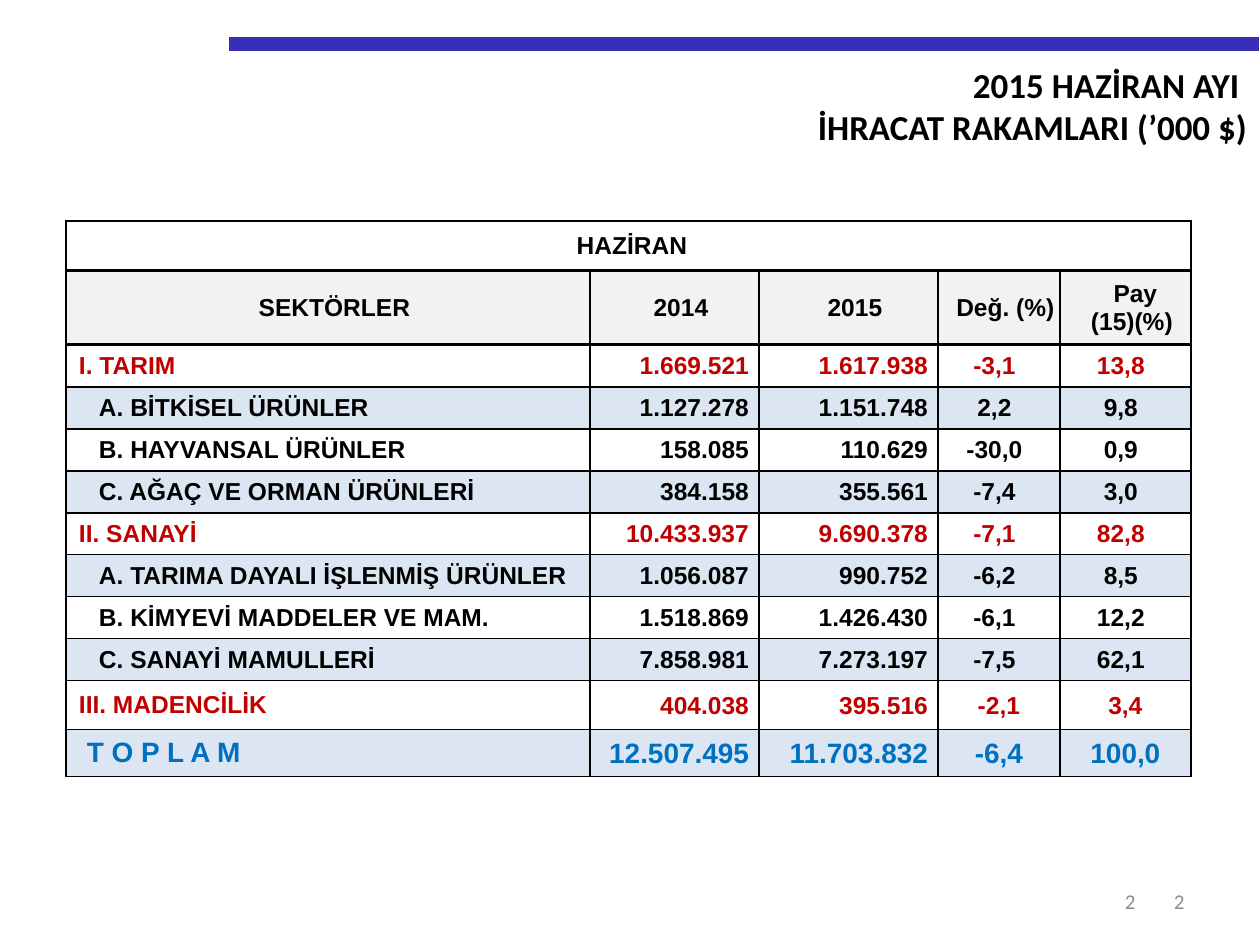
from dataclasses import dataclass

from lxml import etree
from pptx import Presentation
from pptx.dml.color import RGBColor
from pptx.enum import shapes, text
from pptx.oxml import ns
from pptx import util as u


@dataclass(frozen=True)
class Theme:
    heading_font: str = "Calibri"
    table_font: str = "Arial"
    black: str = "000000"
    red: str = "C00000"
    blue: str = "0070C0"
    grey: str = "8C8C8C"
    rule: str = "382EB8"
    header_fill: str = "F2F2F2"
    band_fill: str = "DCE6F2"
    title_size: int = 20
    table_size: int = 14
    total_size: int = 16
    number_size: int = 12


THEME = Theme()
LEFT, CENTER, RIGHT = (text.PP_ALIGN.LEFT, text.PP_ALIGN.CENTER, text.PP_ALIGN.RIGHT)
LABEL_INSETS = (13, 6, 0, 6)
FIGURE_INSETS = (1, 1, 10, 0)
TIGHT_INSETS = (1, 1, 1, 0)

TITLE = ["2015 HAZİRAN AYI ", "İHRACAT RAKAMLARI (’000 $)"]
HEADERS = ["SEKTÖRLER", "2014", "2015", "Değ. (%)", "Pay\n(15)(%)"]
SECTORS = [
    ("I. TARIM", "1.669.521", "1.617.938", "-3,1", "13,8"),
    ("A. BİTKİSEL ÜRÜNLER", "1.127.278", "1.151.748", "2,2", "9,8"),
    ("B. HAYVANSAL ÜRÜNLER", "158.085", "110.629", "-30,0", "0,9"),
    ("C. AĞAÇ VE ORMAN ÜRÜNLERİ", "384.158", "355.561", "-7,4", "3,0"),
    ("II. SANAYİ", "10.433.937", "9.690.378", "-7,1", "82,8"),
    ("A. TARIMA DAYALI İŞLENMİŞ ÜRÜNLER", "1.056.087", "990.752", "-6,2", "8,5"),
    ("B. KİMYEVİ MADDELER VE MAM.", "1.518.869", "1.426.430", "-6,1", "12,2"),
    ("C. SANAYİ MAMULLERİ", "7.858.981", "7.273.197", "-7,5", "62,1"),
    ("III. MADENCİLİK", "404.038", "395.516", "-2,1", "3,4"),
    ("T O P L A M", "12.507.495", "11.703.832", "-6,4", "100,0"),
]
COLUMN_WIDTHS = [524, 169, 179, 122, 131]
ROW_HEIGHTS = [50, 74] + [42] * 8 + [49, 47]


def px(length):
    """Turn pixels, 126 to the inch, into EMU."""
    return u.Emu(round(length * 914400 / 126))


def style_font(font, name, size, color, bold=False):
    font.name = name
    font.size = u.Pt(size)
    font.bold = bold
    font.color.rgb = RGBColor.from_string(color)


def indent(para, length):
    para._p.get_or_add_pPr().set("marL", str(px(length)))


def add_title(page):
    title = page.shapes.title
    title.left, title.top, title.width, title.height = map(px, (134, 57, 1126, 97))
    frame = title.text_frame
    frame.text = "\n".join(TITLE)
    frame.word_wrap = True
    frame.auto_size = text.MSO_AUTO_SIZE.SHAPE_TO_FIT_TEXT
    frame.vertical_anchor = text.MSO_ANCHOR.TOP
    for para in frame.paragraphs:
        para.alignment = RIGHT
        style_font(para.font, THEME.heading_font, THEME.title_size, THEME.black, True)


def add_rule(page):
    rule = page.shapes.add_connector(
        shapes.MSO_CONNECTOR.STRAIGHT, px(229), px(44), px(1259), px(44))
    rule.line.width = u.Pt(8.5)
    rule.line.color.rgb = RGBColor.from_string(THEME.rule)
    etree.SubElement(rule._element.spPr, ns.qn("a:effectLst"))


def add_page_number(page, left, width):
    box = page.shapes.add_textbox(px(left), px(876), px(width), px(50))
    frame = box.text_frame
    frame.word_wrap = True
    frame.vertical_anchor = text.MSO_ANCHOR.MIDDLE
    para = frame.paragraphs[0]
    para.text = "2"
    para.alignment = RIGHT
    style_font(para.font, THEME.heading_font, THEME.number_size, THEME.grey)


def set_borders(cell, top, bottom):
    """Draw black borders, 1 pt at the sides and of given widths above and below."""
    properties = cell._tc.get_or_add_tcPr()
    for side, width in (("L", 1), ("R", 1), ("T", top), ("B", bottom)):
        line = etree.SubElement(properties, ns.qn(f"a:ln{side}"), w=str(u.Pt(width)))
        fill = etree.SubElement(line, ns.qn("a:solidFill"))
        etree.SubElement(fill, ns.qn("a:srgbClr"), val=THEME.black)


def fill_cell(cell, words, align, insets, fill=None, color=THEME.black,
              size=THEME.table_size):
    cell.text = words
    cell.vertical_anchor = text.MSO_ANCHOR.MIDDLE
    (cell.margin_left, cell.margin_top,
     cell.margin_right, cell.margin_bottom) = map(px, insets)
    if fill:
        cell.fill.solid()
        cell.fill.fore_color.rgb = RGBColor.from_string(fill)
    else:
        cell.fill.background()
    for para in cell.text_frame.paragraphs:
        para.alignment = align
        style_font(para.font, THEME.table_font, size, color, True)


def fill_sector_row(table, row, values):
    label = values[0]
    is_total = row == len(ROW_HEIGHTS) - 1
    is_group = label.startswith("I")
    color = THEME.blue if is_total else THEME.red if is_group else THEME.black
    size = THEME.total_size if is_total else THEME.table_size
    fill = THEME.band_fill if row % 2 else None
    share_insets = TIGHT_INSETS if row >= 10 else FIGURE_INSETS
    layouts = ([(LEFT, LABEL_INSETS)] + [(RIGHT, FIGURE_INSETS)] * 2
               + [(CENTER, share_insets)] * 2)
    for column, (words, (align, insets)) in enumerate(zip(values, layouts)):
        fill_cell(table.cell(row, column), words, align, insets, fill, color, size)
    if not is_group:
        indent(table.cell(row, 0).text_frame.paragraphs[0], 8 if is_total else 20)


def add_export_table(page):
    table = page.shapes.add_table(
        len(ROW_HEIGHTS), len(COLUMN_WIDTHS), px(66), px(221),
        px(sum(COLUMN_WIDTHS)), px(sum(ROW_HEIGHTS))).table
    table.first_row = table.horz_banding = False
    for column, width in zip(table.columns, COLUMN_WIDTHS):
        column.width = px(width)
    for index, (row, height) in enumerate(zip(table.rows, ROW_HEIGHTS)):
        row.height = px(height)
        for cell in row.cells:
            set_borders(cell, 2 if index in (1, 2) else 1, 2 if index < 2 else 1)

    month = table.cell(0, 0)
    month.merge(table.cell(0, len(COLUMN_WIDTHS) - 1))
    fill_cell(month, "HAZİRAN", CENTER, (13, 6, 13, 6))
    indent(month.text_frame.paragraphs[0], 7)
    for column, words in enumerate(HEADERS):
        fill_cell(table.cell(1, column), words, CENTER, LABEL_INSETS, THEME.header_fill)
    indent(table.cell(1, 4).text_frame.paragraphs[0], 7)
    for row, values in enumerate(SECTORS, start=2):
        fill_sector_row(table, row, values)


def main():
    deck = Presentation()
    deck.slide_width, deck.slide_height = px(1260), px(945)
    page = deck.slides.add_slide(deck.slide_layouts[5])
    add_rule(page)
    add_title(page)
    add_export_table(page)
    add_page_number(page, 903, 294)
    add_page_number(page, 883, 265)
    deck.save("out.pptx")


if __name__ == "__main__":
    main()
